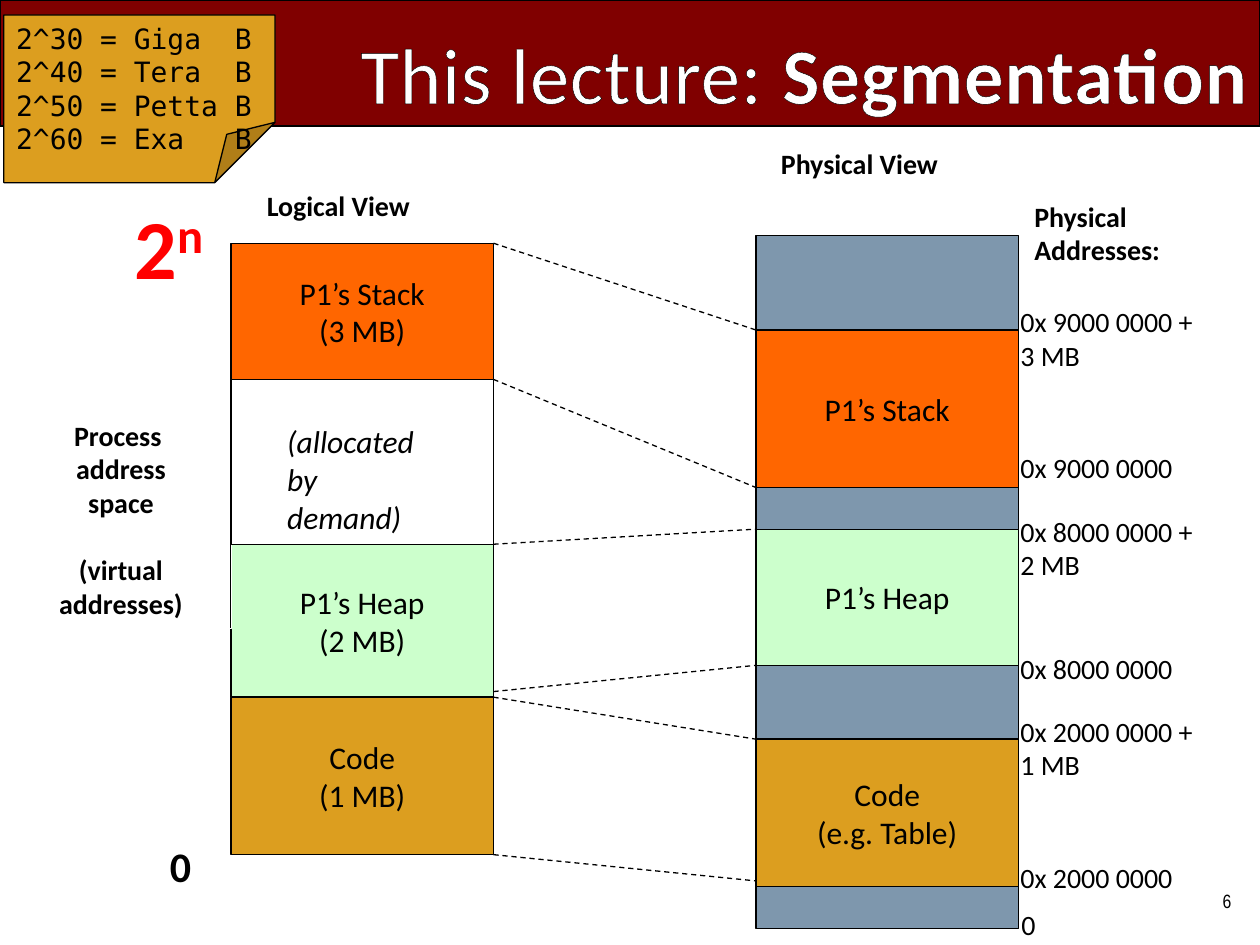
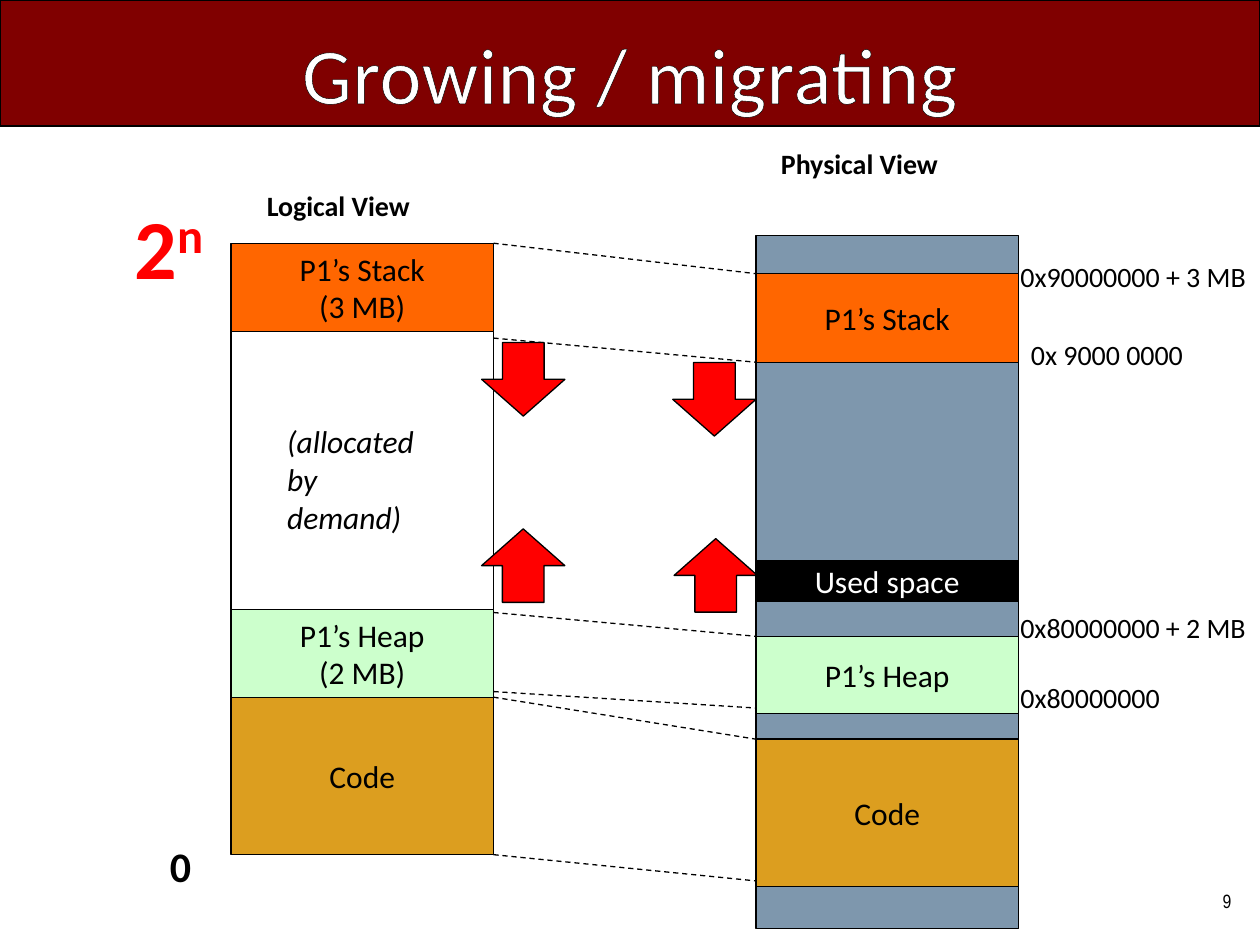
from lxml import etree
from pptx import Presentation
from pptx.dml.color import RGBColor
from pptx.enum.dml import MSO_LINE
from pptx.enum.shapes import MSO_CONNECTOR, MSO_SHAPE
from pptx.enum.text import MSO_ANCHOR, MSO_AUTO_SIZE, PP_ALIGN
from pptx.oxml.ns import qn
from pptx.util import Pt

RECT, FOLDED, ARROW = MSO_SHAPE.RECTANGLE, MSO_SHAPE.FOLDED_CORNER, MSO_SHAPE.RIGHT_ARROW
LEFT, CENTER, RIGHT = PP_ALIGN.LEFT, PP_ALIGN.CENTER, PP_ALIGN.RIGHT
TOP, MIDDLE, BOTTOM = MSO_ANCHOR.TOP, MSO_ANCHOR.MIDDLE, MSO_ANCHOR.BOTTOM

MAROON = RGBColor(0x80, 0x00, 0x00)
SLATE = RGBColor(0x7E, 0x97, 0xAD)
ORANGE = RGBColor(0xFF, 0x66, 0x00)
GREEN = RGBColor(0xCC, 0xFF, 0xCC)
GOLD = RGBColor(0xDC, 0x9E, 0x1F)
RED = RGBColor(0xFF, 0x00, 0x00)
BLACK = RGBColor(0x00, 0x00, 0x00)
WHITE = RGBColor(0xFF, 0xFF, 0xFF)

FONT = "Calibri"
LINE_WIDTH = 0.75
LOGICAL_X, PHYSICAL_X, COLUMN_W = 132, 432, 150
MEMORY_TOP, MEMORY_H = 134.6, 396
ADDRESS_X = 576

# Content: segments are (text, top, bottom, fill); links are (logical y, physical y);
# addresses are (text, left, top, width, height)
SEGMENTATION = {
    "title": [("This lecture: ", False), ("Segmentation", True)],
    "align": RIGHT,
    "number": "6",
    "logical": [("Code\n(1 MB)", 398.4, 488.4, GOLD),
                ("P1’s Heap\n(2 MB)", 311, 398.4, GREEN),
                ("P1’s Stack\n(3 MB)", 139, 216.8, ORANGE)],
    "physical": [("P1’s Heap", 302.4, 380.2, GREEN),
                 ("Code\n(e.g. Table)", 422.4, 506.6, GOLD),
                 ("P1’s Stack", 188.6, 278.6, ORANGE)],
    "gap": (216.8, 311),
    "links": [(139, 188.6), (216.8, 278.6), (311, 302.4),
              (395.2, 380.2), (398.4, 422.4), (488.4, 503.4)],
    "addresses": [("0x 2000 0000", ADDRESS_X, 488.4, 104.4, 26.6),
                  ("0x 2000 0000 +\n1 MB", ADDRESS_X, 404.6, 118, 46),
                  ("0", ADDRESS_X + 0.6, 514.8, 22.3, 26.6),
                  ("0x 8000 0000", ADDRESS_X, 368.6, 104.4, 26.6),
                  ("0x 8000 0000 +\n2 MB", ADDRESS_X, 290.2, 118, 46),
                  ("0x 9000 0000", ADDRESS_X, 254.2, 104.4, 26.6),
                  ("0x 9000 0000 +\n3 MB", ADDRESS_X, 170.6, 118, 46)],
}
GROWING = {
    "title": [("Growing / migrating", False)],
    "align": CENTER,
    "number": "9",
    "logical": [("Code", 398.4, 488.4, GOLD),
                ("P1’s Stack\n(3 MB)", 139, 189.4, ORANGE),
                ("P1’s Heap\n(2 MB)", 348.2, 398.4, GREEN)],
    "physical": [("P1’s Heap", 363.6, 407.6, GREEN),
                 ("Code", 422.4, 506.6, GOLD),
                 ("P1’s Stack", 156.4, 207, ORANGE),
                 ("Used space", 320.6, 343.8, BLACK)],
    "gap": (189.4, 348.2),
    "links": [(139, 156.4), (193.2, 207), (350, 363.6),
              (395.2, 404.6), (398.4, 422.4), (488.4, 503.4)],
    "addresses": [("0x80000000", ADDRESS_X, 385.2, 95, 26.6),
                  ("0x80000000 + 2 MB", ADDRESS_X, 345.6, 151.2, 26.6),
                  ("0x 9000 0000", 582, 189.4, 104.4, 26.6),
                  ("0x90000000 + 3 MB", ADDRESS_X, 144.8, 148.4, 26.6)],
}
PROCESS_LINES = "Process \naddress\nspace\n(virtual\naddresses)"
UNITS = "2^30 = Giga  B\n2^40 = Tera  B\n2^50 = Petta B\n2^60 = Exa   B"
# Growth arrows: (left, top, rotation)
ARROW_W, ARROW_H = 42, 47.6
ARROWS = [(278, 193, 90), (388, 305, 270), (278, 299.4, 270), (387.2, 204.4, 90)]


def write(sp, text, size, color=BLACK, align=LEFT, anchor=TOP, bold=None, italic=None, font=FONT):
    tf = sp.text_frame
    tf.text = text
    tf.word_wrap = True
    tf.vertical_anchor = anchor
    for p in tf.paragraphs:
        p.alignment = align
        for r in p.runs:
            r.font.name, r.font.size = font, Pt(size)
            r.font.bold, r.font.italic = bold, italic
            r.font.color.rgb = color
    return tf


def outline(sp, color=BLACK):
    sp.line.color.rgb = color
    sp.line.width = Pt(LINE_WIDTH)


def add_box(s, x, y, w, h, fill, kind=RECT):
    sp = s.shapes.add_shape(kind, Pt(x), Pt(y), Pt(w), Pt(h))
    sp.shadow.inherit = False
    sp.fill.solid()
    sp.fill.fore_color.rgb = fill
    outline(sp)
    return sp


def add_label(s, text, x, y, w, h, size=16, framed=False, **style):
    sp = s.shapes.add_textbox(Pt(x), Pt(y), Pt(w), Pt(h))
    if framed:
        outline(sp, WHITE)
    return write(sp, text, size, **style)


def add_segment(s, x, text, top, bottom, fill):
    sp = add_box(s, x, top, COLUMN_W, bottom - top, fill)
    write(sp, text, 18, WHITE if fill == BLACK else BLACK, CENTER, MIDDLE)


def add_link(s, logical_y, physical_y):
    c = s.shapes.add_connector(MSO_CONNECTOR.STRAIGHT, Pt(LOGICAL_X + COLUMN_W), Pt(logical_y),
                               Pt(PHYSICAL_X), Pt(physical_y))
    outline(c)
    c.line.dash_style = MSO_LINE.DASH
    etree.SubElement(c._element.spPr, qn("a:effectLst"))


def add_title(s, runs, align):
    sp = s.shapes.title
    sp.left, sp.top, sp.width, sp.height = Pt(0), Pt(0), Pt(720), Pt(72)
    sp.fill.solid()
    sp.fill.fore_color.rgb = MAROON
    outline(sp)
    tf = sp.text_frame
    tf.auto_size = MSO_AUTO_SIZE.NONE
    tf.vertical_anchor = BOTTOM
    p = tf.paragraphs[0]
    p.alignment = align
    for text, bold in runs:
        r = p.add_run()
        r.text = text
        r.font.name, r.font.size, r.font.bold = FONT, Pt(45), bold
        r.font.color.rgb = WHITE
        # Letter spacing and a thin black text outline
        rPr = r.font._element
        rPr.set("spc", "50")
        ln = etree.Element(qn("a:ln"), w=str(Pt(1)))
        fill = etree.SubElement(ln, qn("a:solidFill"))
        etree.SubElement(fill, qn("a:srgbClr"), val=str(BLACK))
        rPr.insert(0, ln)


def add_address_space_top(s):
    tf = add_label(s, "2", 69.8, 108, 87, 65.5, 48, color=RED, bold=True)
    r = tf.paragraphs[0].add_run()
    r.text = "n"
    r.font.name, r.font.size, r.font.bold = FONT, Pt(48), True
    r.font.color.rgb = RED
    r.font._element.set("baseline", "30000")


def add_units_note(s):
    sp = add_box(s, 2.2, 8.6, 155, 95.8, GOLD, FOLDED)
    # Size of the folded corner
    guides = sp._element.spPr.find(qn("a:prstGeom")).find(qn("a:avLst"))
    etree.SubElement(guides, qn("a:gd"), name="adj", fmla="val 36000")
    write(sp, UNITS, 16, font="DejaVu Sans Mono")


def add_memory_slide(prs, content):
    s = prs.slides.add_slide(prs.slide_layouts[5])
    add_title(s, content["title"], content["align"])
    add_label(s, content["number"], 633, 500.4, 77.8, 28.8, 11,
              align=RIGHT, anchor=MIDDLE, font="Arial Narrow")

    # Memory columns
    add_box(s, PHYSICAL_X, MEMORY_TOP, COLUMN_W, MEMORY_H, SLATE)
    for x, column in ((LOGICAL_X, "logical"), (PHYSICAL_X, "physical")):
        for segment in content[column]:
            add_segment(s, x, *segment)

    # Addresses and mapping
    add_label(s, "0", 90, 476.6, 34.6, 36, 24, framed=True, bold=True)
    for address in content["addresses"]:
        add_label(s, *address)
    for link in content["links"]:
        add_link(s, *link)
    return s


def add_unallocated(s, top, bottom):
    add_box(s, LOGICAL_X, top, COLUMN_W, bottom - top, WHITE)
    add_address_space_top(s)
    add_label(s, "Logical View", 145.4, 104.4, 136.8, 26.6, framed=True, bold=True)
    add_label(s, "Physical View", 439.2, 80, 136.8, 26.6, framed=True, bold=True)
    add_label(s, "(allocated\nby demand)", 157, 237.6, 94, 51, 18, italic=True)


def main():
    prs = Presentation()
    prs.slide_width, prs.slide_height = Pt(720), Pt(540)

    # Segmentation
    s = add_memory_slide(prs, SEGMENTATION)
    add_label(s, "Physical\nAddresses:", 584, 110.2, 103, 46, framed=True, bold=True)
    tf = add_label(s, PROCESS_LINES, 5.8, 235.4, 126.7, 124, framed=True, bold=True, align=CENTER)
    tf.paragraphs[3].space_before = Pt(19.5)
    add_unallocated(s, *SEGMENTATION["gap"])
    add_units_note(s)

    # Growing and migrating
    s = add_memory_slide(prs, GROWING)
    add_unallocated(s, *GROWING["gap"])
    for x, y, rotation in ARROWS:
        add_box(s, x, y, ARROW_W, ARROW_H, RED, ARROW).rotation = rotation

    prs.save("out.pptx")


if __name__ == "__main__":
    main()
